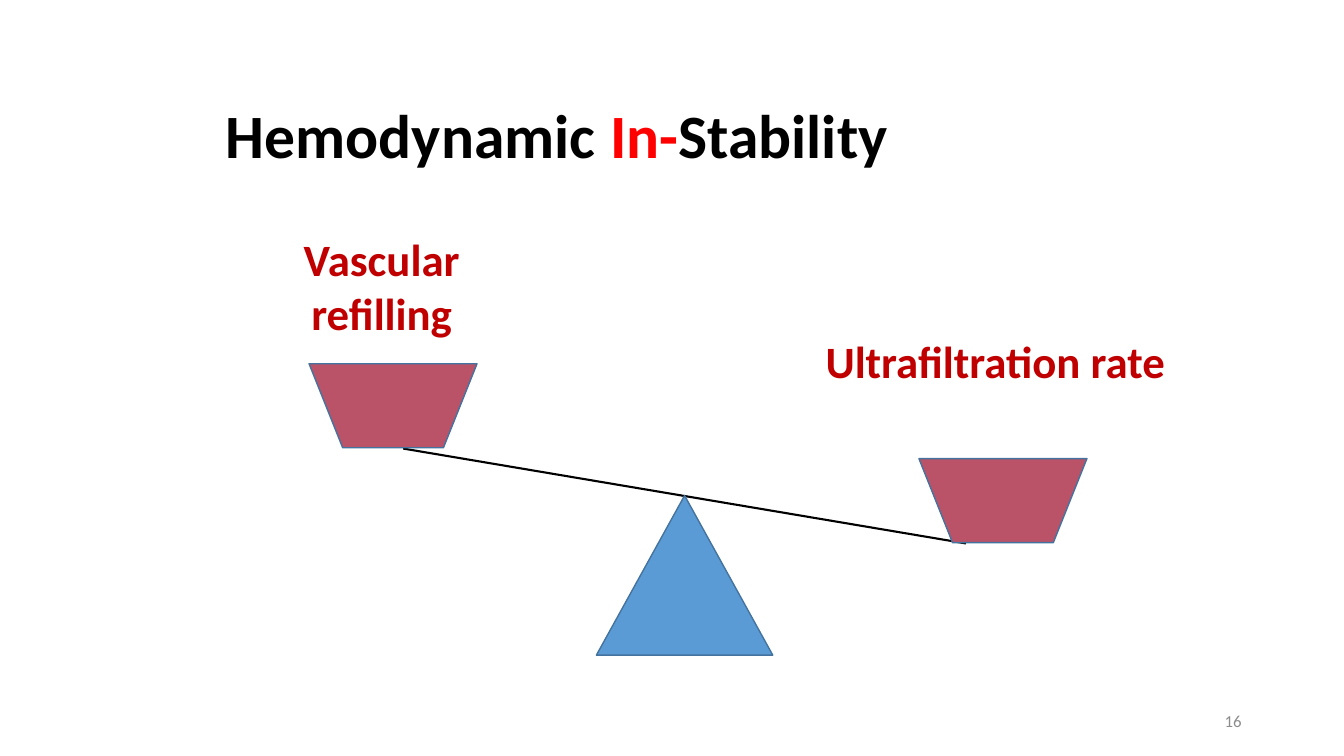
from lxml.etree import SubElement
from pptx import Presentation
from pptx.dml.color import RGBColor
from pptx.enum.shapes import MSO_CONNECTOR, MSO_SHAPE
from pptx.enum.text import MSO_ANCHOR, PP_ALIGN
from pptx.oxml.ns import qn
from pptx.util import Inches, Pt

BLACK = RGBColor(0x00, 0x00, 0x00)
RED = RGBColor(0xFF, 0x00, 0x00)
CRIMSON = RGBColor(0xC0, 0x00, 0x00)
ROSE = RGBColor(0xBA, 0x52, 0x68)
BLUE = RGBColor(0x5B, 0x9B, 0xD5)
NAVY = RGBColor(0x43, 0x73, 0x9E)
GRAY = RGBColor(0x8C, 0x8C, 0x8C)

deck = Presentation()
deck.slide_width = Inches(13.33)
deck.slide_height = Inches(7.5)
slide = deck.slides.add_slide(deck.slide_layouts[5])
shapes = slide.shapes

COLS, ROWS = 160, 90


def place(col, row, *size):
    """Turn grid columns and rows into slide lengths."""
    wide, high = deck.slide_width / COLS, deck.slide_height / ROWS
    return [round(n * (high if i % 2 else wide))
            for i, n in enumerate((col, row, *size))]


def write(box, *runs, size, bold=True, align=PP_ALIGN.CENTER,
          anchor=MSO_ANCHOR.TOP, spacing=1.0):
    """Fill a box with (text, colour) runs."""
    frame = box.text_frame
    frame.word_wrap = True
    frame.vertical_anchor = anchor
    para = frame.paragraphs[0]
    para.alignment = align
    para.line_spacing = spacing
    for text, color in runs:
        run = para.add_run()
        run.text = text
        run.font.name = "Calibri"
        run.font.size = Pt(size)
        run.font.bold = bold
        run.font.color.rgb = color


# Title
title = shapes.title
title.left, title.top, title.width, title.height = place(25.7, 8, 108, 17)
write(title, ("Hemodynamic ", BLACK), ("In-", RED), ("Stability", BLACK),
      size=44, align=PP_ALIGN.LEFT, anchor=MSO_ANCHOR.MIDDLE, spacing=0.9)

# Tilted beam
beam = shapes.add_connector(MSO_CONNECTOR.STRAIGHT, *place(48, 53.4, 115, 64.7))
beam.line.color.rgb = BLACK
beam.line.width = Pt(1.5)
SubElement(beam.element.spPr, qn("a:effectLst"))

# Pivot and the two pans
BOWL = MSO_SHAPE.FLOWCHART_MANUAL_OPERATION
for kind, area, fill in (
    (MSO_SHAPE.ISOSCELES_TRIANGLE, (71, 59, 21, 19), BLUE),
    (BOWL, (36.8, 43.3, 20, 10), ROSE),
    (BOWL, (109.4, 54.6, 20, 10), ROSE),
):
    part = shapes.add_shape(kind, *place(*area))
    part.shadow.inherit = False
    part.fill.solid()
    part.fill.fore_color.rgb = fill
    part.line.color.rgb = NAVY
    part.line.width = Pt(1)

# Pan labels
for text, area in (
    ("Ultrafiltration rate", (97, 39.2, 43, 7.7)),
    ("Vascular refilling", (26, 27, 38.9, 14.2)),
):
    write(shapes.add_textbox(*place(*area)), (text, CRIMSON), size=32)

# Slide number
number = shapes.add_textbox(*place(113, 83.4, 36, 4.8))
write(number, ("16", GRAY), size=12, bold=False,
      align=PP_ALIGN.RIGHT, anchor=MSO_ANCHOR.MIDDLE)

deck.save("out.pptx")
